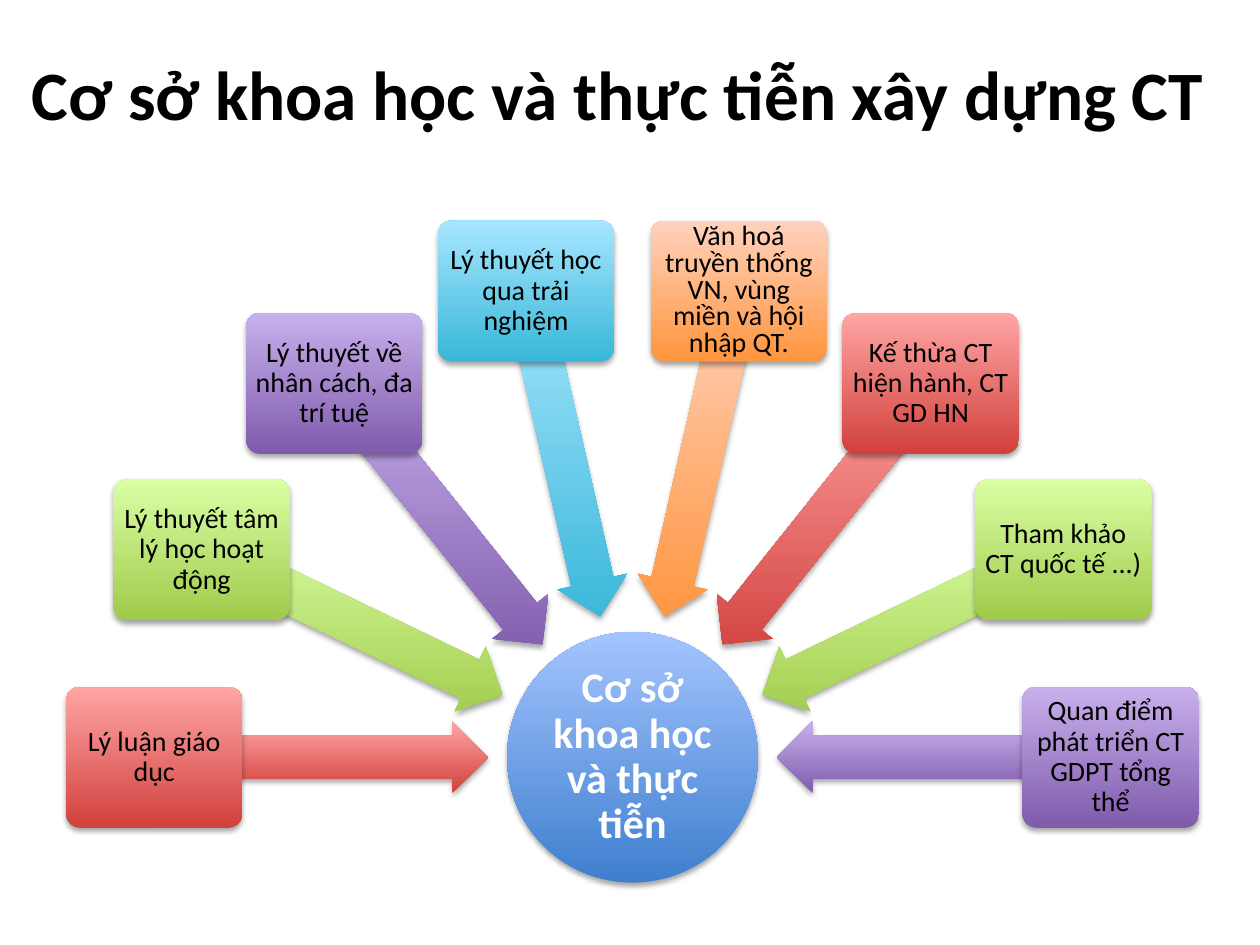
from dataclasses import dataclass
from math import cos, radians, sin

from lxml.etree import SubElement
from pptx import Presentation
from pptx.dml.color import RGBColor
from pptx.enum.shapes import MSO_SHAPE
from pptx.enum.text import MSO_ANCHOR, MSO_AUTO_SIZE, PP_ALIGN
from pptx.oxml.ns import qn
from pptx.util import Inches, Pt


@dataclass(frozen=True)
class Theme:
    font: str = "Calibri"
    title_size: float = 39.6
    hub_size: float = 24
    box_size: float = 16
    dark: str = "000000"
    light: str = "FFFFFF"
    # Gradients run from the bottom colour to the top colour
    blue: tuple = ("3F7FCE", "A4C4FF")
    red: tuple = ("D1403C", "FFA6A5")
    green: tuple = ("A0CA4A", "DAFFA5")
    purple: tuple = ("7F5BAB", "C8B0ED")
    cyan: tuple = ("39B7D8", "A7E6FF")
    orange: tuple = ("FF953E", "FFD2BD")


THEME = Theme()

# Radial layout, in inches
CENTER_X, CENTER_Y = 5.02, 6.01
HUB = 1.99
ARROW_W, ARROW_H, ARROW_RADIUS = 2.65, 0.57, 2.47
BOX_W, BOX_H = 1.4, 1.12
BOX_RADIUS = ARROW_RADIUS + ARROW_W / 2

# Text, colours and line spacing, clockwise from the left
SPOKES = [
    ("Lý luận giáo dục", THEME.red, 0.9),
    ("Lý thuyết tâm lý học hoạt động", THEME.green, 0.9),
    ("Lý thuyết về nhân cách, đa trí tuệ", THEME.purple, 0.9),
    ("Lý thuyết học qua trải nghiệm", THEME.cyan, 0.9),
    ("Văn hoá truyền thống VN, vùng miền và hội nhập QT.", THEME.orange, 0.8),
    ("Kế thừa CT hiện hành, CT GD HN", THEME.red, 0.9),
    ("Tham khảo CT quốc tế ...)", THEME.green, 0.9),
    ("Quan điểm phát triển CT GDPT tổng thể", THEME.purple, 0.9),
]


def set_attrs(obj, values):
    for name, value in values.items():
        setattr(obj, name, value)


def write_text(sp, text, size, color, bold=False, inset=0.1, spacing=1.0, after=0):
    tf = sp.text_frame
    margins = ("margin_left", "margin_top", "margin_right", "margin_bottom")
    set_attrs(tf, dict.fromkeys(margins, Inches(inset)))
    set_attrs(tf, {"word_wrap": True, "auto_size": MSO_AUTO_SIZE.NONE,
                   "vertical_anchor": MSO_ANCHOR.MIDDLE})
    p = tf.paragraphs[0]
    set_attrs(p, {"alignment": PP_ALIGN.CENTER, "line_spacing": spacing,
                  "space_after": Pt(after)})
    r = p.add_run()
    r.text = text
    set_attrs(r.font, {"name": THEME.font, "size": Pt(size), "bold": bold})
    r.font.color.rgb = RGBColor.from_string(color)


def add_shadow(sp):
    sp.shadow.inherit = False
    effects = sp._element.spPr.find(qn("a:effectLst"))
    shadow = SubElement(effects, qn("a:outerShdw"), blurRad="40000", dist="23000",
                        dir="5400000", rotWithShape="0")
    color = SubElement(shadow, qn("a:srgbClr"), val=THEME.dark)
    SubElement(color, qn("a:alpha"), val="35000")


def add_part(shapes, kind, x, y, w, h, colors, adjustments=()):
    """Add a gradient shape centred on (x, y)."""
    sp = shapes.add_shape(kind, Inches(x - w / 2), Inches(y - h / 2),
                          Inches(w), Inches(h))
    for i, value in enumerate(adjustments):
        sp.adjustments[i] = value
    sp.fill.gradient()
    sp.fill.gradient_angle = 90
    for stop, color in zip(sp.fill.gradient_stops, colors):
        stop.color.rgb = RGBColor.from_string(color)
    # Keep the gradient vertical when the shape turns
    sp._element.spPr.find(qn("a:gradFill")).set("rotWithShape", "0")
    sp.line.fill.background()
    add_shadow(sp)
    return sp


def add_hub(shapes, text):
    sp = add_part(shapes, MSO_SHAPE.OVAL, CENTER_X, CENTER_Y, HUB, HUB, THEME.blue)
    write_text(sp, text, THEME.hub_size, THEME.light, bold=True, inset=0.02,
               spacing=0.9, after=0.35 * THEME.hub_size)


def add_spoke(shapes, angle, text, colors, spacing):
    dx, dy = cos(radians(angle)), sin(radians(angle))
    arrow = add_part(shapes, MSO_SHAPE.LEFT_ARROW, CENTER_X + ARROW_RADIUS * dx,
                     CENTER_Y + ARROW_RADIUS * dy, ARROW_W, ARROW_H, colors, (0.6, 0.5))
    arrow.rotation = angle % 360
    box = add_part(shapes, MSO_SHAPE.ROUNDED_RECTANGLE, CENTER_X + BOX_RADIUS * dx,
                   CENTER_Y + BOX_RADIUS * dy, BOX_W, BOX_H, colors, (0.1,))
    write_text(box, text, THEME.box_size, THEME.dark, inset=0.03,
               spacing=spacing, after=0.35 * THEME.box_size)


def add_title(slide, text):
    title = slide.shapes.title
    set_attrs(title, {"left": Inches(0), "top": Inches(0.27),
                      "width": Inches(9.81), "height": Inches(0.94)})
    write_text(title, text, THEME.title_size, THEME.dark, bold=True)


def main():
    prs = Presentation()
    set_attrs(prs, {"slide_width": Inches(10), "slide_height": Inches(7.5)})
    slide = prs.slides.add_slide(prs.slide_layouts[5])
    add_title(slide, "Cơ sở khoa học và thực tiễn xây dựng CT")

    # Radial diagram: the spokes fan over the upper half circle
    diagram = slide.shapes.add_group_shape().shapes
    add_hub(diagram, "Cơ sở khoa học và thực tiễn")
    step = 180 / (len(SPOKES) - 1)
    for i, spoke in enumerate(SPOKES):
        add_spoke(diagram, 180 + i * step, *spoke)

    prs.save("out.pptx")


if __name__ == "__main__":
    main()
